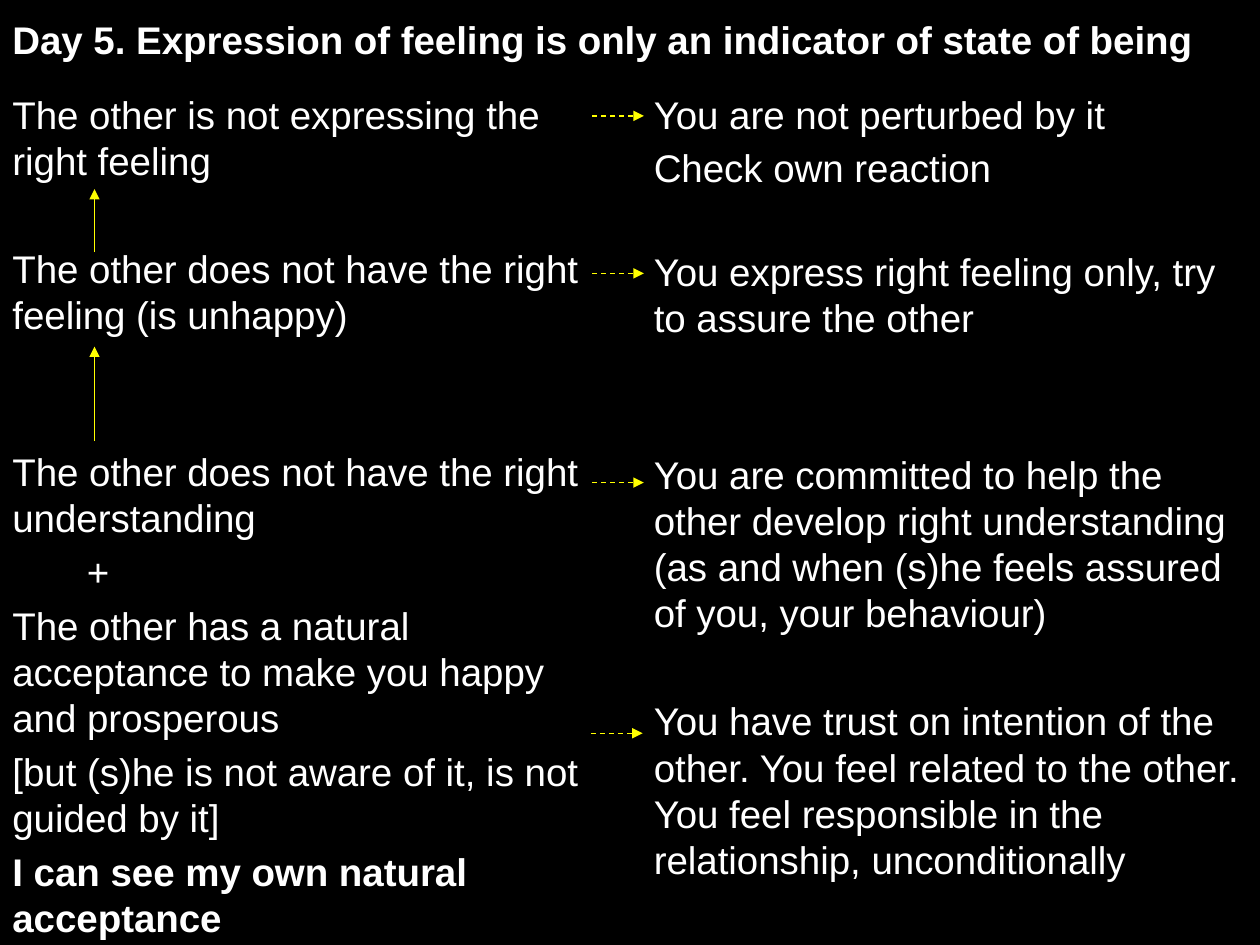
from pptx import Presentation
from pptx.dml.color import RGBColor
from pptx.enum.dml import MSO_LINE
from pptx.enum.shapes import MSO_CONNECTOR
from pptx.oxml.ns import qn
from pptx.util import Inches, Pt
from lxml import etree


def color(value):
    return RGBColor.from_string(value)


def add_text(left, top, width, height, paragraphs):
    shape = slide.shapes.add_textbox(Inches(left), Inches(top), Inches(width), Inches(height))
    frame = shape.text_frame
    frame.word_wrap = True
    for index, (text, space, bold) in enumerate(paragraphs):
        paragraph = frame.paragraphs[0] if index == 0 else frame.add_paragraph()
        paragraph.text = text
        paragraph.space_before = Pt(space)
        paragraph.font.name = "Arial"
        paragraph.font.size = Pt(22)
        paragraph.font.bold = bold
        paragraph.font.color.rgb = color("FFFFFF")
        if text == "+":
            paragraph._p.get_or_add_pPr().set("marL", str(Inches(0.59)))


presentation = Presentation()
presentation.slide_width = Inches(10)
presentation.slide_height = Inches(7.5)
slide = presentation.slides.add_slide(presentation.slide_layouts[6])
slide.background.fill.solid()
slide.background.fill.fore_color.rgb = color("000000")

normal_gap, small_gap, medium_gap, large_gap = 4.4, 32.5, 35.3, 63.4

situations = [
    ("The other is not expressing the right feeling", 0, False),
    ("The other does not have the right feeling (is unhappy)", medium_gap, False),
    ("The other does not have the right understanding", large_gap, False),
    ("+", normal_gap, False),
    ("The other has a natural acceptance to make you happy and prosperous", normal_gap, False),
    ("[but (s)he is not aware of it, is not guided by it]", normal_gap, False),
    ("I can see my own natural acceptance", normal_gap, True),
]
responses = [
    ("You are not perturbed by it", 0, False),
    ("Check own reaction", normal_gap, False),
    ("You express right feeling only, try to assure the other", small_gap, False),
    ("You are committed to help the other develop right understanding "
     "(as and when (s)he feels assured of you, your behaviour)", large_gap, False),
    ("You have trust on intention of the other. You feel related to the other. "
     "You feel responsible in the relationship, unconditionally", medium_gap, False),
]
title = "Day 5. Expression of feeling is only an indicator of state of being"

add_text(0, 0.67, 4.91, 6.83, situations)
add_text(5.09, 0.67, 4.91, 6.83, responses)
add_text(0, 0.08, 10, 0.42, [(title, 0, True)])

arrows = [
    (4.7, 0.92, 5.11, 0.92),
    (4.7, 2.17, 5.11, 2.17),
    (4.7, 3.83, 5.11, 3.83),
    (0.75, 3.5, 0.75, 2.75),
    (0.75, 2, 0.75, 1.5),
    (4.69, 5.82, 5.1, 5.82),
]
for start_x, start_y, end_x, end_y in arrows:
    arrow = slide.shapes.add_connector(
        MSO_CONNECTOR.STRAIGHT, Inches(start_x), Inches(start_y), Inches(end_x), Inches(end_y))
    arrow.line.color.rgb = color("FFFF00")
    arrow.line.width = Pt(0.75)
    if start_y == end_y:
        arrow.line.dash_style = MSO_LINE.DASH
    etree.SubElement(arrow.line._get_or_add_ln(), qn("a:tailEnd"), type="triangle")
    etree.SubElement(arrow._element.spPr, qn("a:effectLst"))

presentation.save("out.pptx")
